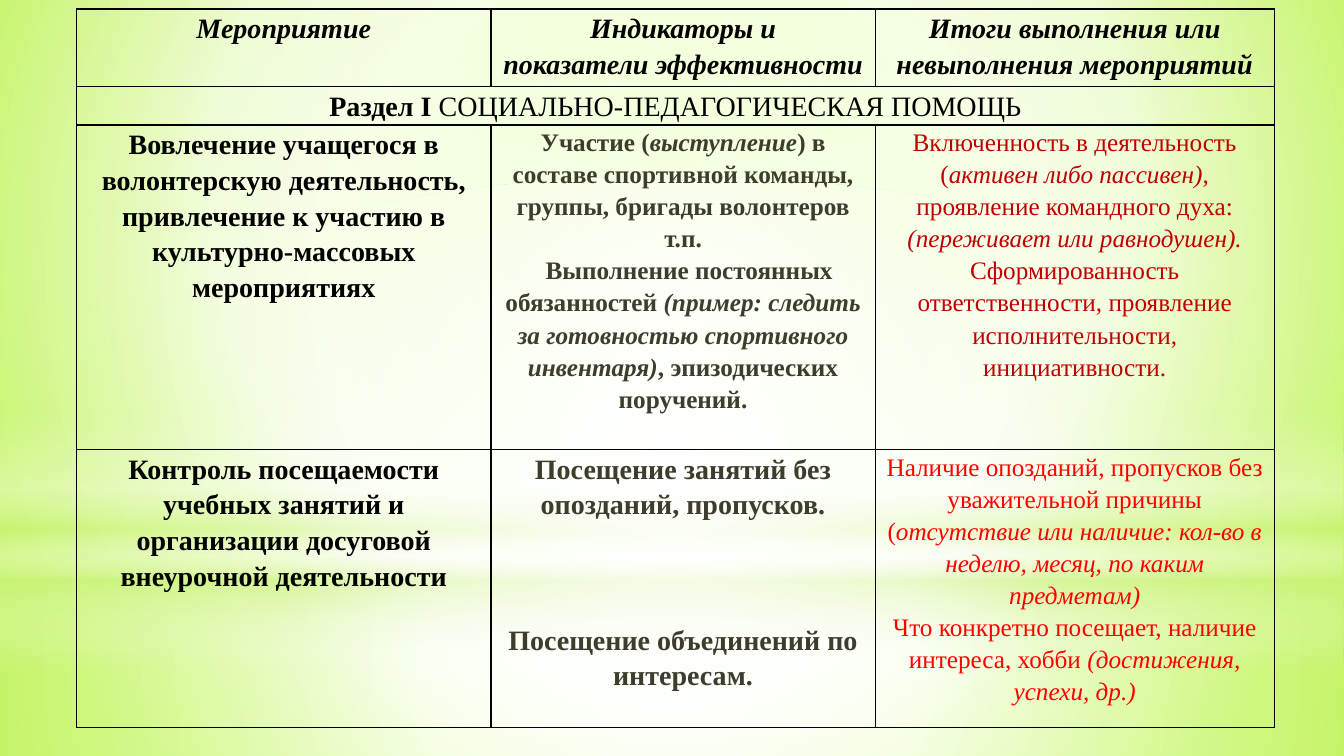
from pptx import Presentation
from pptx.dml.color import RGBColor
from pptx.enum.shapes import MSO_SHAPE
from pptx.enum.text import PP_ALIGN
from pptx.oxml import parse_xml
from pptx.oxml.ns import nsdecls, qn
from pptx.util import Inches, Pt

RECTANGLE, OVAL = MSO_SHAPE.RECTANGLE, MSO_SHAPE.OVAL
CENTER = PP_ALIGN.CENTER
FONT = "Times New Roman"
COLORS = {
    "black": "000000", "olive": "3E3D2D", "dark red": "C00000", "red": "FF0000",
    "white": "FFFFFF", "lime": "CAF278", "bright": "CAFF60", "pale": "F7FFE7", "vivid": "B7FF29",
}


def set_gradient(owner, stops, focus):
    stop_xml = "".join(
        f'<a:gs pos="{position * 1000}"><a:srgbClr val="{COLORS[color]}">'
        f'<a:alpha val="{opacity * 1000}"/></a:srgbClr></a:gs>'
        for position, color, opacity in stops)
    if focus:
        left, top, right, bottom = (side * 1000 for side in focus)
        direction = (f'<a:path path="circle"><a:fillToRect l="{left}" t="{top}" '
                     f'r="{right}" b="{bottom}"/></a:path>')
    else:
        direction = '<a:lin ang="5400000" scaled="0"/>'
    gradient = owner.find(".//" + qn("a:gradFill"))
    gradient.getparent().replace(gradient, parse_xml(
        f'<a:gradFill {nsdecls("a")} rotWithShape="1"><a:gsLst>{stop_xml}</a:gsLst>'
        f'{direction}</a:gradFill>'))


def write_cell(cell, size, color, bold, italic, paragraphs, gap=0, indents=()):
    cell.margin_left = cell.margin_right = Inches(0.04)
    cell.margin_top = cell.margin_bottom = 0
    for index, runs in enumerate(paragraphs):
        frame = cell.text_frame
        paragraph = frame.add_paragraph() if index else frame.paragraphs[0]
        paragraph.alignment = CENTER
        paragraph.line_spacing = 1.15
        paragraph.space_before = Pt(gap if index else 0)
        paragraph.font.name = FONT
        paragraph.font.size = Pt(size)
        paragraph.font.color.rgb = RGBColor.from_string(COLORS[color])
        paragraph.font.bold = bold
        paragraph.font.italic = italic
        if index in indents:
            paragraph._p.get_or_add_pPr().set("indent", str(Inches(0.12)))
        for text, emphasis in runs:
            run = paragraph.add_run()
            run.text = text
            if emphasis == "bold":
                run.font.bold = True
            elif emphasis == "italic":
                run.font.italic = True


prs = Presentation()
prs.slide_width, prs.slide_height = Inches(13.33), Inches(7.5)
slide = prs.slides.add_slide(prs.slide_layouts[6])
slide.background.fill.gradient()
set_gradient(slide.element, [(0, "bright", 100), (60, "pale", 100), (100, "vivid", 100)],
             (20, 10, 20, 60))

MIDDLE = (50, 50, 50, 50)
glows = [
    (RECTANGLE, 5.58, 1.92, [(0, "white", 91), (37, "white", 76), (100, "lime", 79)], MIDDLE),
    (RECTANGLE, 0, 5.58, [(0, "white", 89), (48, "white", 62), (100, "lime", 79)], MIDDLE),
    (RECTANGLE, 4.12, 2.5, [(0, "white", 0), (29, "white", 30), (45, "lime", 40),
                            (55, "white", 26), (65, "lime", 60), (100, "white", 0)], None),
    (OVAL, 1.75, 5.58, [(0, "white", 100), (56, "white", 0)], MIDDLE),
]
for outline, top, height, stops, focus in glows:
    glow = slide.shapes.add_shape(outline, 0, Inches(top), prs.slide_width, Inches(height))
    glow.shadow.inherit = False
    glow.line.fill.background()
    glow.fill.gradient()
    set_gradient(glow.element, stops, focus)

column_widths = [4.11, 3.81, 3.96]
row_heights = [0.77, 0.38, 3.22, 2.76]
plan = slide.shapes.add_table(
    len(row_heights), len(column_widths), Inches(0.76), Inches(0.09),
    Inches(sum(column_widths)), Inches(sum(row_heights))).table
plan.first_row = plan.horz_banding = False
for column, width in zip(plan.columns, column_widths):
    column.width = Inches(width)
for row, height in zip(plan.rows, row_heights):
    row.height = Inches(height)

for cell in plan.iter_cells():
    cell.fill.background()
    properties = cell._tc.get_or_add_tcPr()
    for order, side in enumerate(["lnL", "lnR", "lnT", "lnB"]):
        properties.insert(order, parse_xml(
            f'<a:{side} {nsdecls("a")} w="{Pt(1)}"><a:solidFill>'
            f'<a:srgbClr val="{COLORS["black"]}"/></a:solidFill></a:{side}>'))
plan.cell(1, 0).merge(plan.cell(1, 2))

headings = [
    ["Мероприятие"],
    ["Индикаторы и", "показатели эффективности"],
    ["Итоги выполнения или невыполнения мероприятий"],
]
for column, lines in enumerate(headings):
    write_cell(plan.cell(0, column), 20, "black", True, True, [[(line, "")] for line in lines])

write_cell(plan.cell(1, 0), 20, "black", False, False, [
    [("Раздел I", "bold"), (" СОЦИАЛЬНО-ПЕДАГОГИЧЕСКАЯ ПОМОЩЬ", "")]])

activities = [
    "Вовлечение учащегося в волонтерскую деятельность, привлечение к участию в "
    "культурно-массовых мероприятиях",
    "Контроль посещаемости учебных занятий и организации досуговой внеурочной деятельности",
]
for row, activity in enumerate(activities, start=2):
    write_cell(plan.cell(row, 0), 20, "black", True, False, [[(activity, "")]])

write_cell(plan.cell(2, 1), 18, "olive", True, False, [
    [("Участие (", ""), ("выступление", "italic"),
     (") в составе спортивной команды, группы, бригады волонтеров т.п.", "")],
    [("Выполнение постоянных обязанностей ", ""),
     ("(пример: следить за готовностью спортивного инвентаря)", "italic"),
     (", эпизодических поручений.", "")],
], indents=(1,))
write_cell(plan.cell(2, 2), 18, "dark red", False, False, [
    [("Включенность в деятельность (", ""), ("активен либо пассивен)", "italic"),
     (", проявление командного духа: ", ""), ("(переживает или равнодушен).", "italic")],
    [("Сформированность ответственности, проявление исполнительности, инициативности.", "")],
])
write_cell(plan.cell(3, 1), 20, "olive", True, False, [
    [("Посещение занятий без опозданий, пропусков.", "")],
    [("Посещение объединений по интересам.", "")],
], gap=71)
write_cell(plan.cell(3, 2), 18, "red", False, False, [
    [("Наличие опозданий, пропусков без уважительной причины (", ""),
     ("отсутствие или наличие: кол-во в неделю, месяц, по каким предметам)", "italic")],
    [("Что конкретно посещает, наличие интереса, хобби ", ""),
     ("(достижения, успехи, др.)", "italic")],
])

prs.save("out.pptx")
